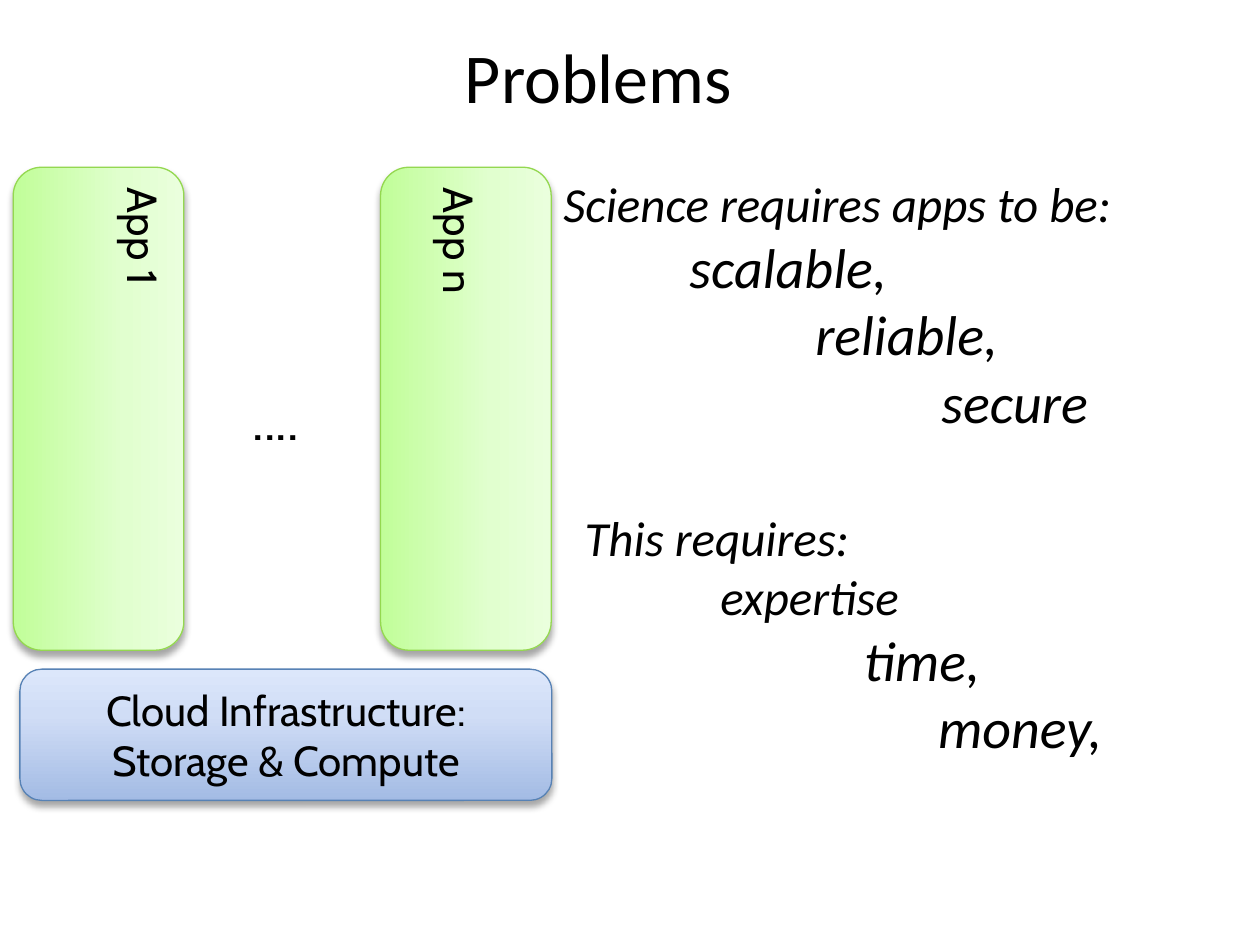
from lxml import etree
from pptx import Presentation
from pptx.dml.color import RGBColor
from pptx.enum import shapes, text
from pptx.oxml import parse_xml
from pptx.oxml.ns import nsdecls
from pptx.util import Pt

BLACK = RGBColor(0x00, 0x00, 0x00)
BLUE_LINE = RGBColor(0x57, 0x82, 0xB5)
GREEN_LINE = RGBColor(0x94, 0xD8, 0x50)
BLUE_STOPS = (RGBColor(0xA3, 0xBB, 0xE4), RGBColor(0xD0, 0xDD, 0xF6), RGBColor(0xDC, 0xE7, 0xFB))
GREEN_STOPS = (RGBColor(0xC1, 0xFE, 0x99), RGBColor(0xE1, 0xFF, 0xCF), RGBColor(0xEA, 0xFF, 0xDD))


def write_lines(frame, lines, font_name, align, italic=False):
    """Write (text, size, left indent) lines, one paragraph each."""
    for number, (words, size, indent) in enumerate(lines):
        paragraph = frame.paragraphs[0] if number == 0 else frame.add_paragraph()
        paragraph.alignment = align
        if indent:
            paragraph._p.get_or_add_pPr().set("marL", str(Pt(indent)))
        run = paragraph.add_run()
        run.text = words
        run.font.color.rgb = BLACK
        font = {"name": font_name, "size": Pt(size), "italic": italic}
        for name, value in font.items():
            setattr(run.font, name, value)


def style_block(shape, stops, line_color):
    """Give a block its three-stop gradient, thin outline and soft shadow."""
    shape.fill.gradient()
    shape.fill.gradient_angle = 90
    stop_list = shape._element.spPr.find(".//{*}gsLst")
    for stop in list(stop_list):
        stop_list.remove(stop)
    for position, color in zip((0, 65, 100), stops):
        stop_list.append(parse_xml(
            f'<a:gs {nsdecls("a")} pos="{position * 1000}"><a:srgbClr val="{color}"/></a:gs>'))
    shape.line.color.rgb = line_color
    shape.line.width = Pt(0.75)
    shape.shadow.inherit = False
    shape._element.spPr.find("{*}effectLst").append(parse_xml(
        f'<a:outerShdw {nsdecls("a")} blurRad="{Pt(4)}" dist="{Pt(3)}" dir="5400000" '
        'rotWithShape="0"><a:srgbClr val="000000"><a:alpha val="35000"/></a:srgbClr></a:outerShdw>'))


presentation = Presentation()
presentation.slide_width, presentation.slide_height = Pt(720), Pt(540)
slide = presentation.slides.add_slide(presentation.slide_layouts[5])

# Title
title = slide.shapes.title
title.left, title.top, title.width, title.height = Pt(0), Pt(-2), Pt(684), Pt(90)
title.text_frame.vertical_anchor = text.MSO_ANCHOR.MIDDLE
write_lines(title.text_frame, [("Problems", 40, 0)], "Calibri", text.PP_ALIGN.CENTER)

# Cloud infrastructure base
stack = slide.shapes.add_group_shape().shapes
base = stack.add_shape(shapes.MSO_SHAPE.ROUNDED_RECTANGLE, Pt(11.4), Pt(382.4), Pt(304), Pt(75))
style_block(base, BLUE_STOPS, BLUE_LINE)
write_lines(base.text_frame, [("Cloud Infrastructure:", 24, 0), ("Storage & Compute", 24, 0)],
            "Cabin", text.PP_ALIGN.CENTER)

# App columns, turned a quarter to stand on the base
for label, left, top_margin in (("App 1", -81.7, 3.6), ("App n", 128.2, 32.6)):
    app = stack.add_shape(shapes.MSO_SHAPE.ROUNDED_RECTANGLE, Pt(left), Pt(184.8), Pt(276), Pt(97.5))
    app.rotation = 90
    style_block(app, GREEN_STOPS, GREEN_LINE)
    app.text_frame.vertical_anchor = text.MSO_ANCHOR.TOP
    app.text_frame.margin_top = Pt(top_margin)
    write_lines(app.text_frame, [(label, 24, 0)], "Cabin", text.PP_ALIGN.LEFT)

# Dots between the apps
dots = stack.add_textbox(Pt(137.5), Pt(216), Pt(50.4), Pt(46))
dots.text_frame.word_wrap = False
write_lines(dots.text_frame, [("....", 32, 0)], "Cabin", text.PP_ALIGN.LEFT)

# Stepped lists on the right
needs = [("Science requires apps to be:", 28, 0), ("scalable,", 32, 72),
         ("reliable,", 32, 144), ("secure", 32, 216)]
costs = [("This requires:", 28, 0), ("expertise", 28, 77.5),
         ("time,", 32, 159.5), ("money,", 32, 202)]
for lines, left, top, height in ((needs, 314.8, 95.8, 157.7), (costs, 327, 286.6, 191.5)):
    box = slide.shapes.add_textbox(Pt(left), Pt(top), Pt(404.6), Pt(height))
    box.text_frame.word_wrap = True
    write_lines(box.text_frame, lines, "Calibri", text.PP_ALIGN.LEFT, italic=True)

presentation.save("out.pptx")
